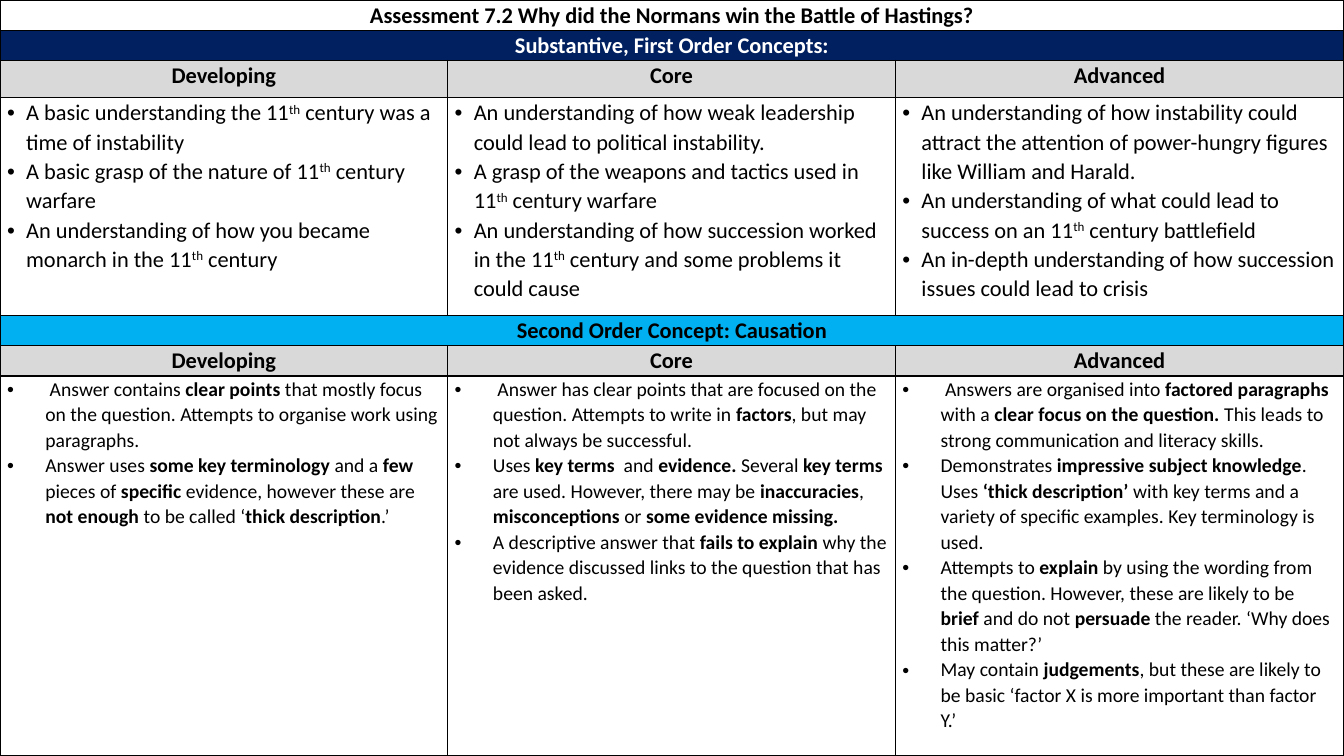
from dataclasses import dataclass

from pptx import Presentation
from pptx.dml.color import RGBColor
from pptx.enum import text
from pptx.oxml import ns, xmlchemy
from pptx.util import Inches, Pt

FONT = "Calibri"
BLACK, WHITE, NAVY, SKY, GREY = "000000", "FFFFFF", "002060", "00B0F0", "D9D9D9"
COLUMN_WIDTHS = (4.44, 4.44, 4.45)
LEVELS = ("Developing", "Core", "Advanced")


@dataclass
class Row:
    """One table row; a single entry spans all columns.

    In the entries, *stars* mark bold and ^carets^ mark superscript.
    """
    height: float
    entries: tuple[str | tuple[str, ...], ...]
    fill: str | None = None
    color: str = BLACK
    size: int = 16
    indent: float = 0  # hanging indent of bullets; 0 means a centred heading


SUBSTANTIVE = (
    ("A basic understanding the 11^th^ century was a time of instability",
     "A basic grasp of the nature of 11^th^ century warfare",
     "An understanding of how you became monarch in the 11^th^ century"),
    ("An understanding of how weak leadership could lead to political instability.",
     "A grasp of the weapons and tactics used in 11^th^ century warfare",
     "An understanding of how succession worked in the 11^th^ century and some problems "
     "it could cause"),
    ("An understanding of how instability could attract the attention of power-hungry "
     "figures like William and Harald.",
     "An understanding of what could lead to success on an 11^th^ century battlefield",
     "An in-depth understanding of how succession issues could lead to crisis"),
)
CAUSATION = (
    (" Answer contains *clear points* that mostly focus on the question. Attempts to "
     "organise work using paragraphs.",
     "Answer uses *some key terminology* and a *few *pieces of *specific* evidence, "
     "however these are *not enough *to be called ‘*thick description*.’"),
    (" Answer has clear points that are focused on the question. Attempts to write in "
     "*factors*, but may not always be successful.",
     "Uses *key terms * and *evidence. *Several *key terms* are used. However, there may "
     "be *inaccuracies*,* misconceptions *or *some evidence missing.*",
     "A descriptive answer that *fails to explain* why the evidence discussed links to "
     "the question that has been asked."),
    (" Answers are organised into *factored paragraphs *with a *clear focus on the "
     "question.* This leads to strong communication and literacy skills.",
     "Demonstrates *impressive subject knowledge*. Uses *‘thick description’* with key "
     "terms and a variety of specific examples. Key terminology is used.",
     "Attempts to *explain* by using the wording from the question. However, these are "
     "likely to be *brief* and do not *persuade* the reader. ‘Why does this matter?’",
     "May contain *judgements*, but these are likely to be basic ‘factor X is more "
     "important than factor Y.’"),
)
ROWS = (
    Row(0.3, ("Assessment 7.2 Why did the Normans win the Battle of Hastings?",)),
    Row(0.3, ("Substantive, First Order Concepts:",), NAVY, WHITE),
    Row(0.37, LEVELS, GREY),
    Row(2.16, SUBSTANTIVE, indent=0.19),
    Row(0.3, ("Second Order Concept: Causation",), SKY),
    Row(0.3, LEVELS, GREY),
    Row(3.77, CAUSATION, size=14, indent=0.38),
)


def rgb(value: str) -> RGBColor:
    return RGBColor.from_string(value)


def add_child(parent, tag: str, **attributes):
    child = xmlchemy.OxmlElement(tag)
    for name, value in attributes.items():
        child.set(name, str(value))
    parent.append(child)
    return child


def set_borders(cell) -> None:
    """Draw a thin black line on all four sides of a cell."""
    properties = cell._tc.get_or_add_tcPr()
    for position, side in enumerate(("a:lnL", "a:lnR", "a:lnT", "a:lnB")):
        line = xmlchemy.OxmlElement(side)
        line.set("w", str(Pt(1)))
        add_child(add_child(line, "a:solidFill"), "a:srgbClr", val=BLACK)
        properties.insert(position, line)


def set_bullet(paragraph, indent: float) -> None:
    properties = paragraph._p.get_or_add_pPr()
    properties.set("marL", str(Inches(indent)))
    properties.set("indent", str(-Inches(indent)))
    add_child(properties, "a:buFont", typeface="Arial")
    add_child(properties, "a:buChar", char="•")


def add_runs(paragraph, marked: str) -> None:
    """Turn the bold and superscript marks into runs."""
    for bold_index, stretch in enumerate(marked.split("*")):
        for raised_index, words in enumerate(stretch.split("^")):
            if not words:
                continue
            run = paragraph.add_run()
            run.text = words
            if bold_index % 2:
                run.font.bold = True
            if raised_index % 2:
                run._r.get_or_add_rPr().set("baseline", "30000")


def fill_cell(cell, row: Row, entry: str | tuple[str, ...]) -> None:
    lines = (entry,) if isinstance(entry, str) else entry
    frame = cell.text_frame
    for index, line in enumerate(lines):
        paragraph = frame.add_paragraph() if index else frame.paragraphs[0]
        paragraph.line_spacing = 1.07
        if row.indent:
            set_bullet(paragraph, row.indent)
        else:
            paragraph.alignment = text.PP_ALIGN.CENTER
        font = paragraph.font
        font.name, font.size, font.bold = FONT, Pt(row.size), not row.indent
        font.color.rgb = rgb(row.color)
        add_runs(paragraph, line)


def format_cell(cell, row: Row) -> None:
    cell.margin_left = cell.margin_right = Inches(0.07)
    cell.margin_top = cell.margin_bottom = 0
    if row.fill:
        cell.fill.solid()
        cell.fill.fore_color.rgb = rgb(row.fill)
    else:
        cell.fill.background()
    set_borders(cell)


def add_assessment_table(slide, width: int, height: int) -> None:
    columns = len(COLUMN_WIDTHS)
    table = slide.shapes.add_table(len(ROWS), columns, 0, 0, width, height).table
    table.first_row = table.horz_banding = False
    for column, column_width in zip(table.columns, COLUMN_WIDTHS):
        column.width = Inches(column_width)
    for index, row in enumerate(ROWS):
        table.rows[index].height = Inches(row.height)
        for column in range(columns):
            format_cell(table.cell(index, column), row)
        if len(row.entries) == 1:
            table.cell(index, 0).merge(table.cell(index, columns - 1))
        for column, entry in enumerate(row.entries):
            fill_cell(table.cell(index, column), row, entry)


def main() -> None:
    presentation = Presentation()
    presentation.slide_width, presentation.slide_height = Inches(13.33), Inches(7.5)
    slide = presentation.slides.add_slide(presentation.slide_layouts[6])
    add_assessment_table(slide, presentation.slide_width, presentation.slide_height)
    presentation.save("out.pptx")


if __name__ == "__main__":
    main()
